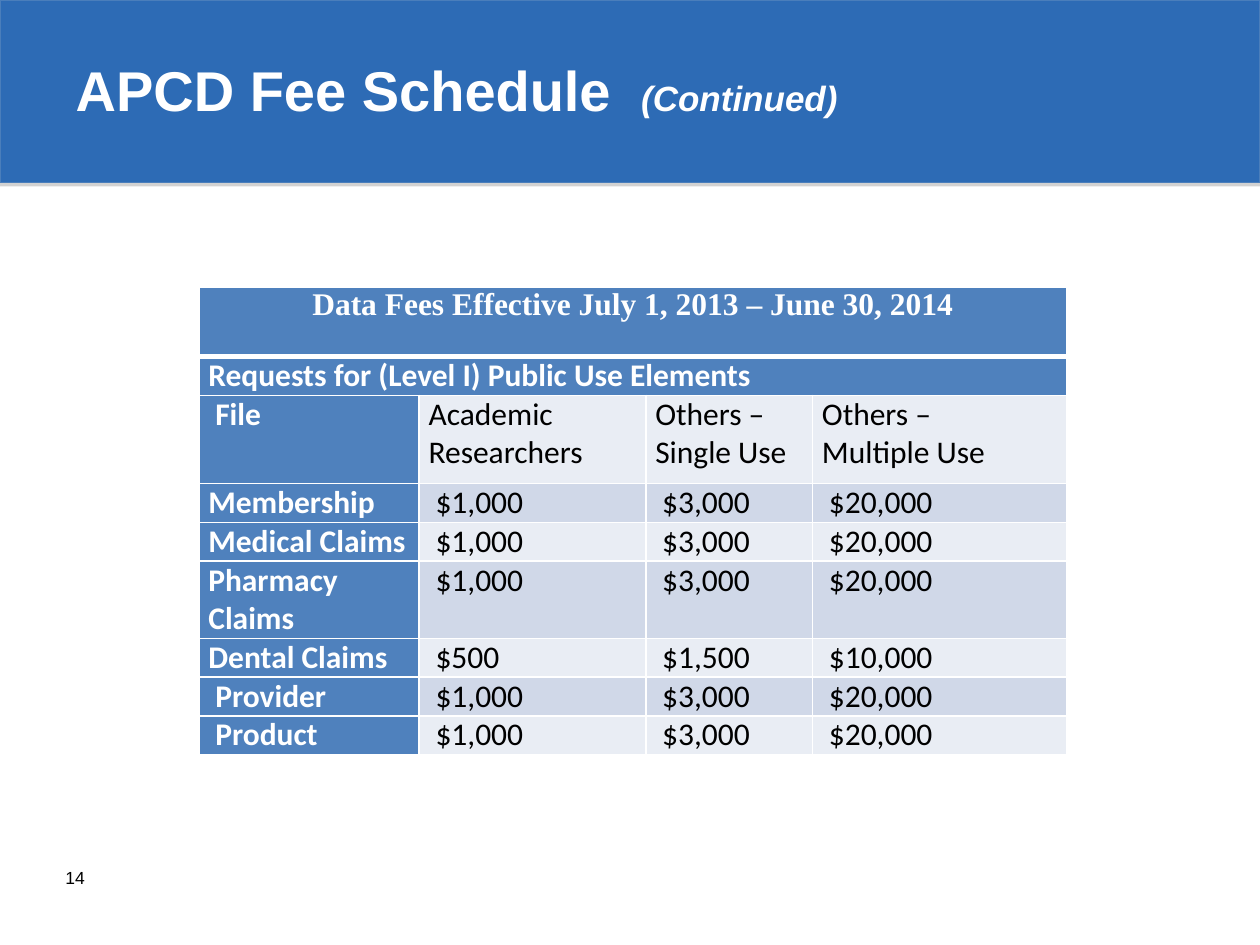
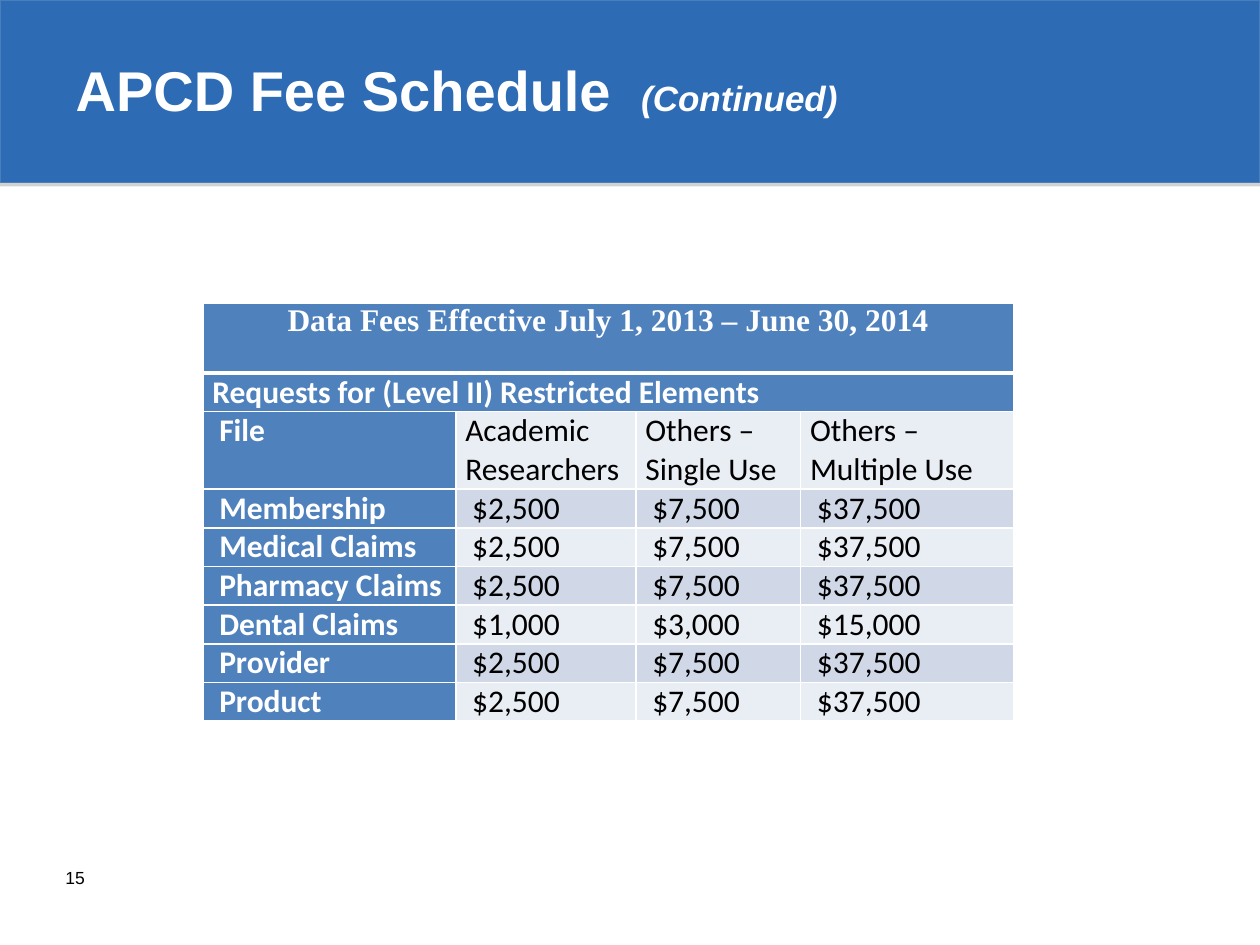
"""Builds two slides of data fee tables under a shared title band."""
from lxml.etree import SubElement as Sub
from pptx import Presentation
from pptx.dml.color import RGBColor
from pptx.enum.shapes import MSO_SHAPE as Kind
from pptx.enum.text import MSO_ANCHOR as Anchor, MSO_AUTO_SIZE as Auto, PP_ALIGN as Align
from pptx.oxml.ns import qn
from pptx.util import Cm, Pt

WHITE, BLACK = "FFFFFF", "000000"
BAND, EDGE, SHADE = "2D6BB5", "4A7EBB", "808080"
HEAD, PALE, DARK = "4F81BD", "E9EDF4", "D0D8E8"
LINE, PAD, NUDGE = 0.78, 0.19, 0.14

TITLE = "APCD Fee Schedule"
NOTE = "(Continued)"
TERM = "Data Fees Effective July 1, 2013 – June 30, 2014"
HEADS = ("File", "Academic Researchers", "Others – Single Use", "Others –\nMultiple Use")
PAGES = [
    {
        "num": 14,
        "level": "Requests for (Level I) Public Use Elements",
        "at": (4.01, 5.79),
        "cols": (4.44, 4.57, 3.36, 5.13),
        "high": {2: 1.78, 5: 2 * LINE},
        "flush": ("Membership", "Medical Claims", "Pharmacy Claims", "Dental Claims"),
        "fees": [
            ("Membership", "$1,000", "$3,000", "$20,000"),
            ("Medical Claims", "$1,000", "$3,000", "$20,000"),
            ("Pharmacy Claims", "$1,000", "$3,000", "$20,000"),
            ("Dental Claims", "$500", "$1,500", "$10,000"),
            ("Provider", "$1,000", "$3,000", "$20,000"),
            ("Product", "$1,000", "$3,000", "$20,000"),
        ],
    },
    {
        "num": 15,
        "level": "Requests for (Level II) Restricted Elements",
        "at": (4.09, 6.12),
        "cols": (5.1, 3.63, 3.32, 4.29),
        "high": {2: 2 * LINE},
        "flush": (),
        "fees": [
            ("Membership", "$2,500", "$7,500", "$37,500"),
            ("Medical Claims", "$2,500", "$7,500", "$37,500"),
            ("Pharmacy Claims", "$2,500", "$7,500", "$37,500"),
            ("Dental Claims", "$1,000", "$3,000", "$15,000"),
            ("Provider", "$2,500", "$7,500", "$37,500"),
            ("Product", "$2,500", "$7,500", "$37,500"),
        ],
    },
]


def paint(color, tone):
    color.rgb = RGBColor.from_string(tone)


def write(para, text, size=18, face="Calibri", tone=BLACK, bold=False, slant=False):
    for num, part in enumerate(text.split("\n")):
        if num:
            para.add_line_break()
        run = para.add_run()
        run.text = part
        font = run.font
        font.size, font.name, font.bold, font.italic = Pt(size), face, bold, slant
        paint(font.color, tone)


def place(shape, left, top, width, height):
    shape.left, shape.top, shape.width, shape.height = map(Cm, (left, top, width, height))


def add_title(slide):
    title = slide.shapes.title
    band = slide.shapes.add_shape(Kind.RECTANGLE, 0, 0, Cm(25.4), Cm(3.68))
    title.element.addprevious(band.element)
    band.fill.solid()
    paint(band.fill.fore_color, BAND)
    paint(band.line.color, EDGE)
    band.line.width = Pt(0.75)
    band.shadow.inherit = False
    glow = band.element.spPr.find(qn("a:effectLst"))
    shade = Sub(glow, qn("a:outerShdw"), dist=str(Pt(1.8)), dir="5400000", rotWithShape="0")
    color = Sub(shade, qn("a:srgbClr"), val=SHADE)
    Sub(color, qn("a:alpha"), val="35000")

    place(title, 1.27, 0.2, 22.86, 3.18)
    frame = title.text_frame
    frame.auto_size, frame.vertical_anchor = Auto.NONE, Anchor.MIDDLE
    para = frame.paragraphs[0]
    para.alignment = Align.LEFT
    tabs = Sub(para._p.get_or_add_pPr(), qn("a:tabLst"))
    Sub(tabs, qn("a:tab"), pos=str(Cm(11.4)), algn="l")
    write(para, TITLE + "\t", size=32, face="Arial", tone=WHITE, bold=True)
    write(para, NOTE, size=20, face="Arial", tone=WHITE, bold=True, slant=True)


def add_num(slide, num):
    box = slide.shapes.add_textbox(Cm(1.07), Cm(17.35), Cm(5.92), Cm(1.02))
    box.text_frame.word_wrap = True
    write(box.text_frame.paragraphs[0], str(num), size=10, face="Arial")


def dress(cell, tone, row):
    edges = {"L": 1, "R": 1, "T": 3 if row == 1 else 1, "B": 3 if row == 0 else 1}
    props = cell._tc.get_or_add_tcPr()
    for side, width in edges.items():
        line = Sub(props, qn("a:ln" + side), w=str(Pt(width)))
        Sub(Sub(line, qn("a:solidFill")), qn("a:srgbClr"), val=WHITE)
    cell.fill.solid()
    paint(cell.fill.fore_color, tone)
    cell.margin_left = cell.margin_right = Cm(PAD)
    cell.margin_top = cell.margin_bottom = 0


def add_fees(slide, page):
    rows = [(TERM,), (page["level"],), HEADS, *page["fees"]]
    cols = page["cols"]
    highs = [page["high"].get(row, LINE) for row in range(len(rows))]
    highs[0] = 1.4
    left, top = page["at"]
    area = map(Cm, (left, top, sum(cols), sum(highs)))
    grid = slide.shapes.add_table(len(rows), len(cols), *area).table
    grid.first_row = grid.horz_banding = False
    for col, width in zip(grid.columns, cols):
        col.width = Cm(width)
    for row, texts in enumerate(rows):
        grid.rows[row].height = Cm(highs[row])
        for col in range(len(cols)):
            side = row < 2 or col == 0
            dress(grid.cell(row, col), HEAD if side else (DARK if row % 2 else PALE), row)
        if len(texts) == 1:
            grid.cell(row, 0).merge(grid.cell(row, len(cols) - 1))
        for col, text in enumerate(texts):
            cell = grid.cell(row, col)
            side = row < 2 or col == 0
            flush = row < 2 or (row == 2 and col) or text in page["flush"]
            if not flush:
                cell.margin_left = Cm(PAD + NUDGE)
            para = cell.text_frame.paragraphs[0]
            if row == 0:
                para.alignment = Align.CENTER
            write(para, text, face="Calibri" if row else "Times New Roman",
                  tone=WHITE if side else BLACK, bold=side)


def main():
    deck = Presentation()
    deck.slide_width, deck.slide_height = Cm(25.4), Cm(19.05)
    for page in PAGES:
        slide = deck.slides.add_slide(deck.slide_layouts[5])
        add_title(slide)
        add_num(slide, page["num"])
        add_fees(slide, page)
    deck.save("out.pptx")


if __name__ == "__main__":
    main()
